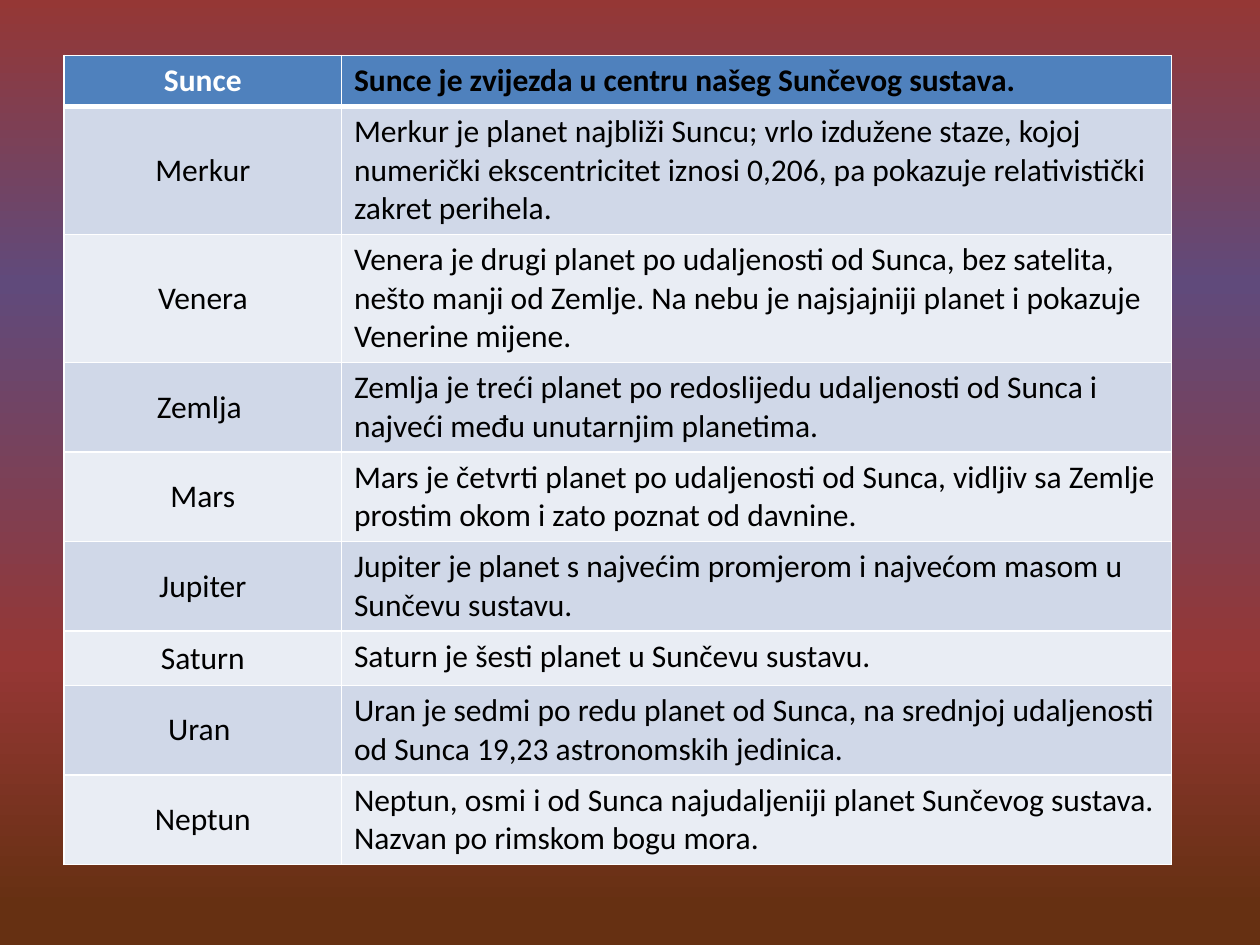
"""Build a slide with a table of the Sun and the planets."""
from lxml import etree
from pptx import Presentation
from pptx import util as u
from pptx.dml import color
from pptx.enum import text
from pptx.oxml import ns

ROWS = [
    ("Sunce", "Sunce je zvijezda u centru našeg Sunčevog sustava.", 0.39),
    ("Merkur", "Merkur je planet najbliži Suncu; vrlo izdužene staze, kojoj numerički "
     "ekscentricitet iznosi 0,206, pa pokazuje relativistički zakret perihela.", 1),
    ("Venera", "Venera je drugi planet po udaljenosti od Sunca, bez satelita, nešto "
     "manji od Zemlje. Na nebu je najsjajniji planet i pokazuje Venerine mijene.", 1),
    ("Zemlja ", "Zemlja je treći planet po redoslijedu udaljenosti od Sunca i najveći "
     "među unutarnjim planetima.", 0.7),
    ("Mars", "Mars je četvrti planet po udaljenosti od Sunca, vidljiv sa Zemlje prostim "
     "okom i zato poznat od davnine.", 0.7),
    ("Jupiter", "Jupiter je planet s najvećim promjerom i najvećom masom u Sunčevu "
     "sustavu.", 0.7),
    ("Saturn", "Saturn je šesti planet u Sunčevu sustavu.", 0.43),
    ("Uran ", "Uran je sedmi po redu planet od Sunca, na srednjoj udaljenosti od Sunca "
     "19,23 astronomskih jedinica.", 0.7),
    ("Neptun", "Neptun, osmi i od Sunca najudaljeniji planet Sunčevog sustava. Nazvan "
     "po rimskom bogu mora.", 0.7),
]
COLS = [2.2, 6.59]
STOPS = [(0, "953735"), (30, "604A7B"), (70, "953735"), (96, "663012")]
HEAD, BANDS = "4F81BD", ["E9EDF4", "D0D8E8"]


def rgb(code):
    """Turn a hex string into a colour."""
    return color.RGBColor.from_string(code)


def add(node, tag, **attrs):
    """Append a drawing element with attributes."""
    child = etree.SubElement(node, ns.qn(tag))
    for key, val in attrs.items():
        child.set(key, str(val))
    return child


def paint(slide):
    """Give the slide its vertical gradient."""
    fill = slide.background.fill
    fill.gradient()
    fill.gradient_angle = 270
    stops = slide.element.find(".//" + ns.qn("a:gsLst"))
    for old in list(stops):
        stops.remove(old)
    for pos, code in STOPS:
        add(add(stops, "a:gs", pos=pos * 1000), "a:srgbClr", val=code)


def edge(cell, top, foot):
    """Draw white borders around a cell."""
    props = cell._tc.get_or_add_tcPr()
    for side, width in zip("LRTB", (1, 1, top, foot)):
        line = add(props, "a:ln" + side, w=u.Pt(width))
        add(add(line, "a:solidFill"), "a:srgbClr", val="FFFFFF")


def write(cell, words, ink="000000", bold=False, mid=False):
    """Put formatted text in a cell."""
    cell.text = words
    para = cell.text_frame.paragraphs[0]
    if mid:
        para.alignment = text.PP_ALIGN.CENTER
        cell.vertical_anchor = text.MSO_ANCHOR.MIDDLE
    font = para.runs[0].font
    font.name, font.size, font.bold = "Calibri", u.Pt(18), bold
    font.color.rgb = rgb(ink)


def main():
    """Make and save the deck."""
    deck = Presentation()
    deck.slide_width, deck.slide_height = u.Inches(10), u.Inches(7.5)
    slide = deck.slides.add_slide(deck.slide_layouts[6])
    paint(slide)
    high = sum(row[2] for row in ROWS)
    table = slide.shapes.add_table(
        len(ROWS), len(COLS), u.Inches(0.51), u.Inches(0.44),
        u.Inches(sum(COLS)), u.Inches(high)).table
    for col, width in zip(table.columns, COLS):
        col.width = u.Inches(width)
    for i, (name, note, tall) in enumerate(ROWS):
        table.rows[i].height = u.Inches(tall)
        head = i == 0
        for j, words in enumerate((name, note)):
            cell = table.cell(i, j)
            edge(cell, 3 if i == 1 else 1, 3 if head else 1)
            cell.fill.solid()
            cell.fill.fore_color.rgb = rgb(HEAD if head else BANDS[i % 2])
            ink = "FFFFFF" if head and j == 0 else "000000"
            write(cell, words, ink=ink, bold=head, mid=j == 0)
    deck.save("out.pptx")


if __name__ == "__main__":
    main()
